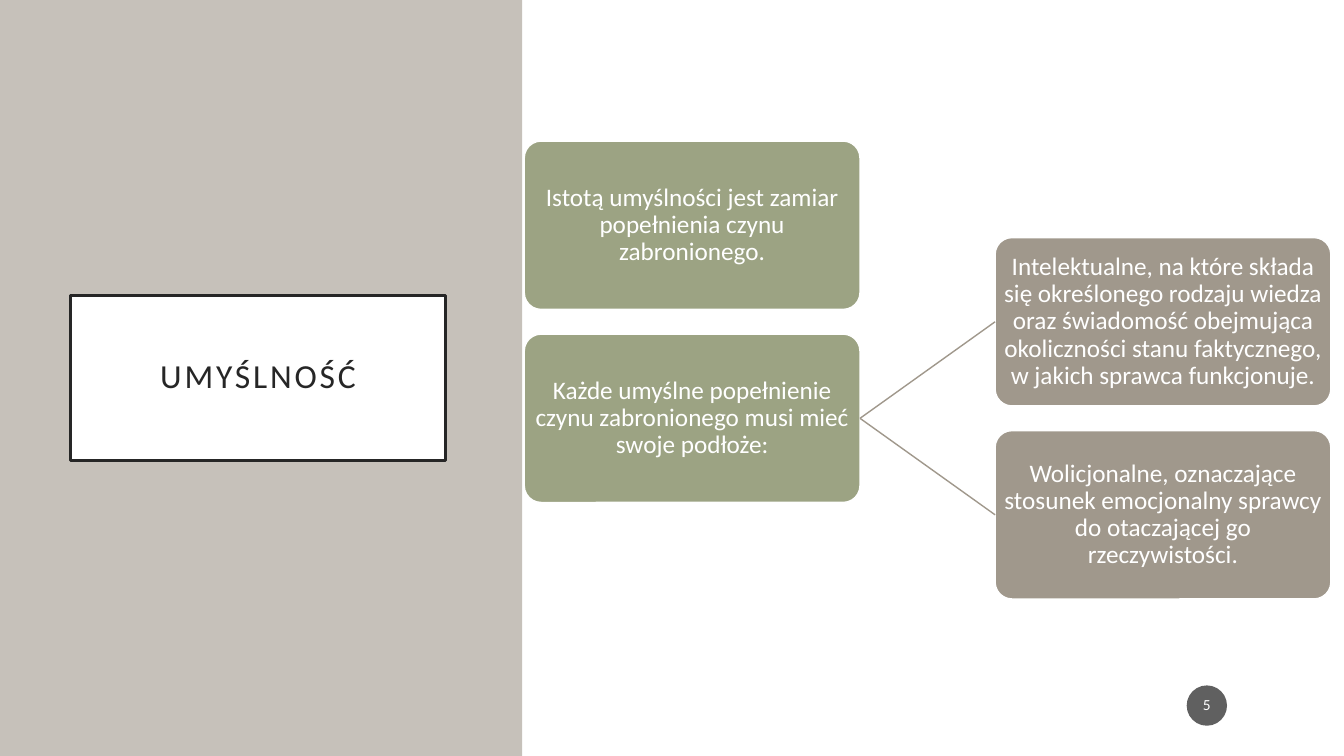
import pptx
import pptx.util
import pptx.dml.color
import pptx.enum.shapes
import pptx.enum.text
import pptx.oxml
import lxml.etree

Inches = pptx.util.Inches
Pt = pptx.util.Pt
kinds = pptx.enum.shapes.MSO_SHAPE


def hue(code):
    return pptx.dml.color.RGBColor.from_string(code)


def draw(kind, area, fill, line=None, weight=1, text="", size=18, ink="FFFFFF", inset=(0, 0), after=0):
    form = slide.shapes.add_shape(kind, *[Inches(side) for side in area])
    form.shadow.inherit = False
    form.fill.solid()
    form.fill.fore_color.rgb = hue(fill)
    if line:
        form.line.color.rgb = hue(line)
        form.line.width = Pt(weight)
    else:
        form.line.fill.background()
    if text:
        frame = form.text_frame
        frame.word_wrap = True
        frame.vertical_anchor = pptx.enum.text.MSO_ANCHOR.MIDDLE
        frame.margin_left = frame.margin_right = Inches(inset[0])
        frame.margin_top = frame.margin_bottom = Inches(inset[1])
        para = frame.paragraphs[0]
        para.alignment = pptx.enum.text.PP_ALIGN.CENTER
        para.line_spacing = 0.9
        para.space_after = Pt(after)
        run = para.add_run()
        run.text = text
        run.font.name = "Calibri"
        run.font.size = Pt(size)
        run.font.color.rgb = hue(ink)
    return form


deck = pptx.Presentation()
wide, high = 13.33, 7.5
deck.slide_width = Inches(wide)
deck.slide_height = Inches(high)
slide = deck.slides.add_slide(deck.slide_layouts[6])

left, top = 5.2, 1.4
draw(kinds.RECTANGLE, (0, 0, 5.18, high), "C6C1BA")
title = draw(kinds.RECTANGLE, (0.7, 2.93, 3.72, 1.64), "FFFFFF", "262626", 2.5,
             "UMYŚLNOŚĆ", 24, "262626", (0.2, 0.2))
title.text_frame.paragraphs[0].runs[0].font._element.set("spc", "200")
draw(kinds.RECTANGLE, (left, 0, wide - left, high), "FFFFFF")

badge = draw(kinds.OVAL, (11.77, 6.8, 0.4, 0.4), "1D1D1D", text="5", size=11, inset=(0.02, 0.05), after=6)
tint = badge.fill._xPr.find(".//" + pptx.oxml.ns.qn("a:srgbClr"))
lxml.etree.SubElement(tint, pptx.oxml.ns.qn("a:alpha"), val="70000")

box, tall = 3.33, 1.67
step, row = 4.67, 1.915
cards = [
    (0, 0, "9CA383", "Istotą umyślności jest zamiar popełnienia czynu zabronionego."),
    (0, 1, "9CA383", "Każde umyślne popełnienie czynu zabronionego musi mieć swoje podłoże:"),
    (1, 0.5, "A0988C", "Intelektualne, na które składa się określonego rodzaju wiedza oraz świadomość "
                       "obejmująca okoliczności stanu faktycznego, w jakich sprawca funkcjonuje."),
    (1, 1.5, "A0988C", "Wolicjonalne, oznaczające stosunek emocjonalny sprawcy do otaczającej go rzeczywistości."),
]
boxes = []
for col, line, fill, text in cards:
    card = draw(kinds.ROUNDED_RECTANGLE, (left + col * step, top + line * row, box, tall),
                fill, "FFFFFF", text=text, inset=(0.01, 0.01))
    card.adjustments[0] = 0.1
    boxes.append(card)

for goal in boxes[2:]:
    link = slide.shapes.add_connector(pptx.enum.shapes.MSO_CONNECTOR.STRAIGHT, 0, 0, 0, 0)
    link.begin_connect(boxes[1], 3)
    link.end_connect(goal, 1)
    link.line.color.rgb = hue("A0988C")
    link.line.width = Pt(1)
    lxml.etree.SubElement(link._element.spPr, pptx.oxml.ns.qn("a:effectLst"))

deck.save("out.pptx")
